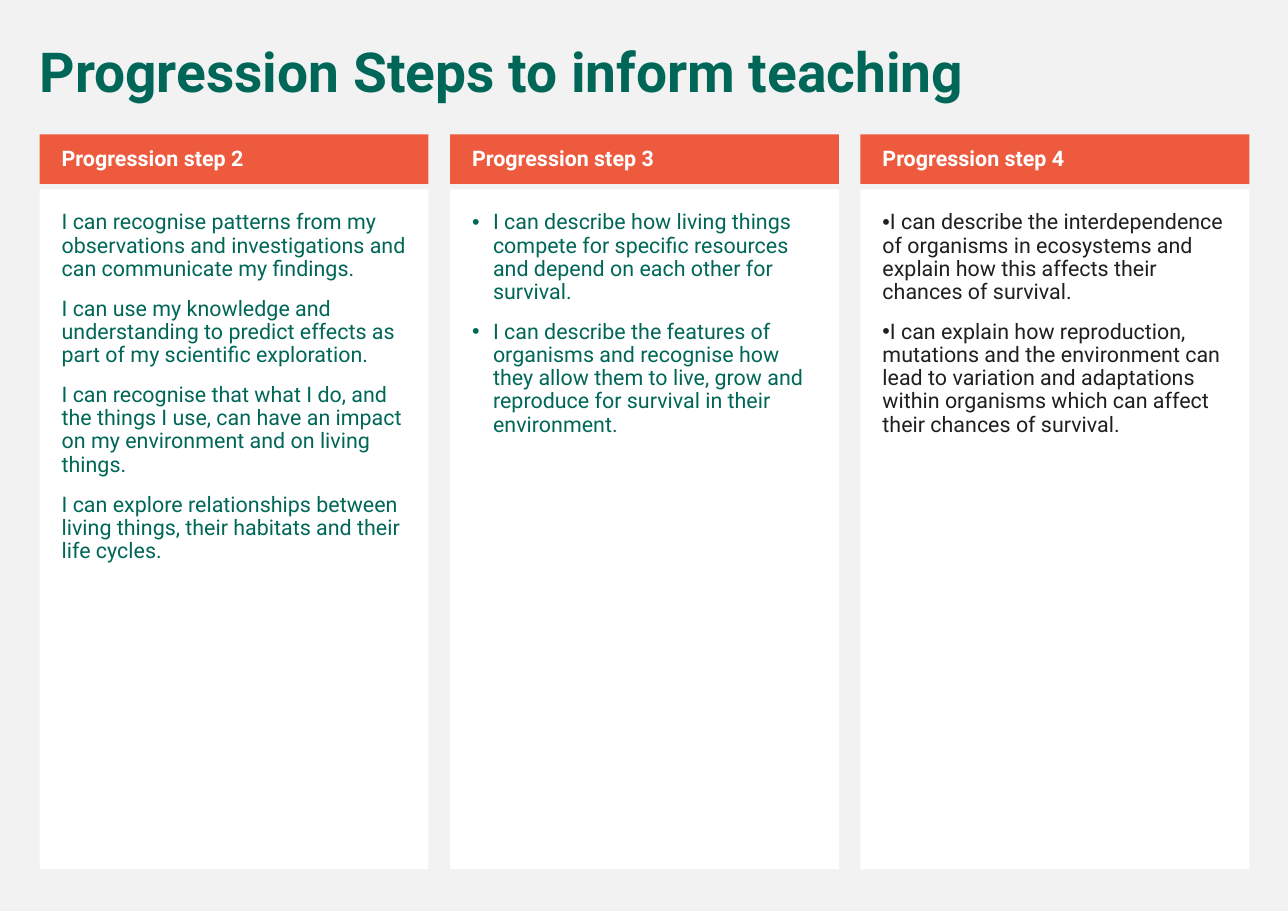
from pptx import Presentation
from pptx.dml.color import RGBColor
from pptx.enum.shapes import MSO_SHAPE
from pptx.enum.text import MSO_ANCHOR, MSO_AUTO_SIZE, PP_ALIGN
from pptx.oxml.ns import qn
from pptx.util import Inches, Pt
from lxml.etree import SubElement

GREY = RGBColor(0xF2, 0xF2, 0xF2)
WHITE = RGBColor(0xFF, 0xFF, 0xFF)
GREEN = RGBColor(0x00, 0x67, 0x58)
CORAL = RGBColor(0xED, 0x5A, 0x3E)
BLACK = RGBColor(0x1F, 0x1F, 0x1F)

LEFT, TOP, WIDTH, HEIGHT = 0.36, 1.22, 3.53, 6.67
PITCH = (7.81 - LEFT) / 2
HEAD, GAP = 0.45, 0.05

STEPS = [
    ("Progression step 2", GREEN, None, [
        "I can recognise patterns from my observations and investigations and can communicate my findings.",
        "I can use my knowledge and understanding to predict effects as part of my scientific exploration.",
        "I can recognise that what I do, and the things I use, can have an impact on my environment and on living things.",
        "I can explore relationships between living things, their habitats and their life cycles.",
    ]),
    ("Progression step 3", GREEN, 0.19, [
        "I can describe how living things compete for specific resources and depend on each other for survival.",
        "I can describe the features of organisms and recognise how they allow them to live, grow and reproduce for survival in their environment.",
    ]),
    ("Progression step 4", BLACK, 0, [
        "I can describe the interdependence of organisms in ecosystems and explain how this affects their chances of survival.",
        "I can explain how reproduction, mutations and the environment can lead to variation and adaptations within organisms which can affect their chances of survival.",
    ]),
]


def write(frame, lines, size, color, bold, insets, anchor):
    frame.word_wrap = True
    frame.auto_size = MSO_AUTO_SIZE.NONE
    frame.vertical_anchor = anchor
    (frame.margin_left, frame.margin_top,
     frame.margin_right, frame.margin_bottom) = map(Inches, insets)
    frame.text = "\n".join(lines)
    for para in frame.paragraphs:
        para.alignment = PP_ALIGN.LEFT
        para.line_spacing = 0.9
        para.space_before = Pt(11)
        font = para.runs[0].font
        font.name = "Roboto"
        font.size = Pt(size)
        font.bold = bold
        font.color.rgb = color


def add_dots(frame, indent):
    for para in frame.paragraphs:
        props = para._p.get_or_add_pPr()
        props.set("marL", str(Inches(indent)))
        props.set("indent", str(-Inches(indent)))
        SubElement(props, qn("a:buFont"), typeface="Arial")
        SubElement(props, qn("a:buChar"), char="•")


def add_panel(slide, box, fill):
    panel = slide.shapes.add_shape(MSO_SHAPE.RECTANGLE, *map(Inches, box))
    panel.shadow.inherit = False
    panel.fill.solid()
    panel.fill.fore_color.rgb = fill
    panel.line.fill.background()
    return panel.text_frame


def add_title(slide, box, text):
    title = slide.shapes.title
    title.left, title.top, title.width, title.height = map(Inches, box)
    write(title.text_frame, [text], 36, GREEN, True,
          (0.1, 0.05, 0.1, 0.05), MSO_ANCHOR.TOP)


def add_step(slide, box, name, color, indent, lines):
    left, top, width, height = box
    drop = HEAD + GAP
    body = add_panel(slide, (left, top + drop, width, height - drop), WHITE)
    write(body, lines, 14, color, False, (0.2, 0.2, 0.2, 0.2), MSO_ANCHOR.TOP)
    if indent is not None:
        add_dots(body, indent)
    head = add_panel(slide, (left, top, width, HEAD), CORAL)
    write(head, [name], 14, WHITE, True,
          (0.2, 0.05, 0.1, 0.05), MSO_ANCHOR.MIDDLE)


def main():
    deck = Presentation()
    deck.slide_width, deck.slide_height = Inches(11.69), Inches(8.27)
    slide = deck.slides.add_slide(deck.slide_layouts.get_by_name("Title Only"))
    slide.background.fill.solid()
    slide.background.fill.fore_color.rgb = GREY
    add_title(slide, (0.26, 0.36, 11.08, 0.65),
              "Progression Steps to inform teaching")
    for col, step in enumerate(STEPS):
        add_step(slide, (LEFT + col * PITCH, TOP, WIDTH, HEIGHT), *step)
    deck.save("out.pptx")


if __name__ == "__main__":
    main()
